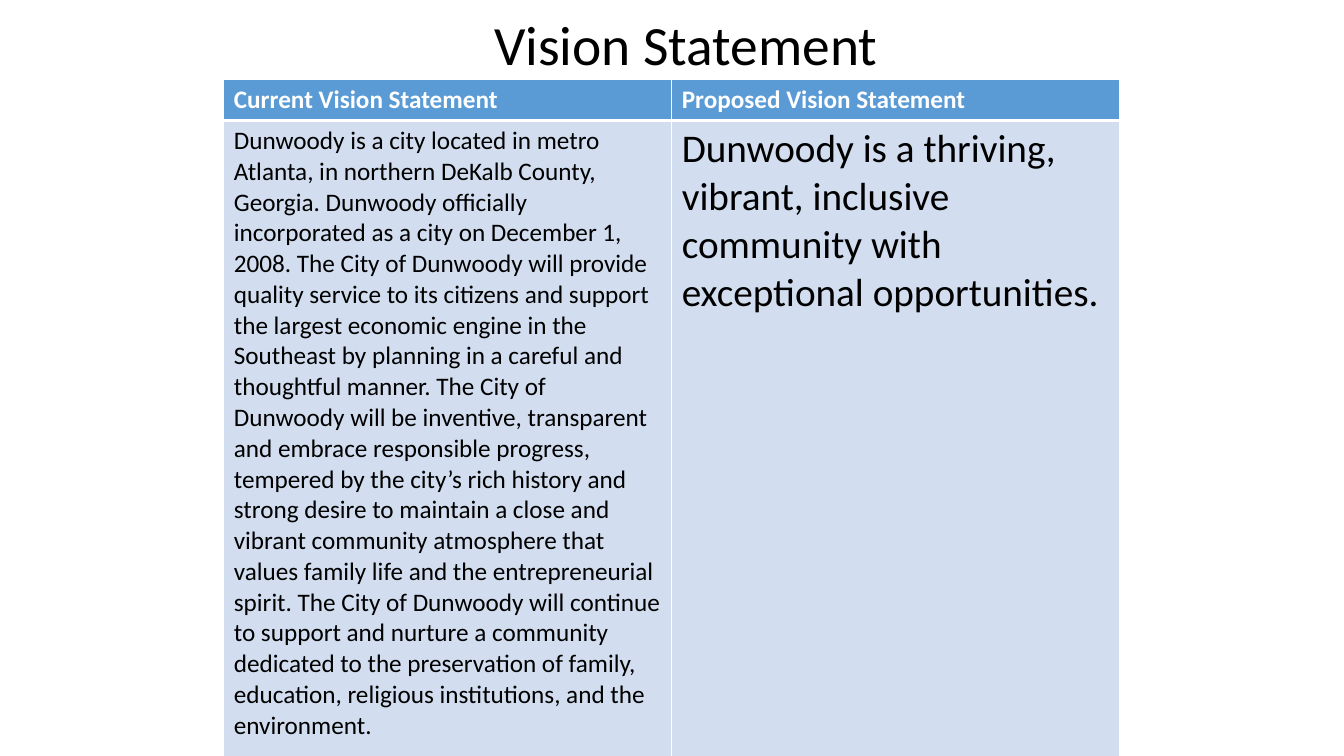
"""Build the slide that compares the current and proposed vision statements."""
from lxml.etree import SubElement
from pptx import Presentation
from pptx.dml.color import RGBColor
from pptx.enum.text import MSO_ANCHOR, MSO_AUTO_SIZE, PP_ALIGN
from pptx.oxml.ns import qn
from pptx.util import Cm, Pt

COLORS = {"header": "5B9BD5", "body": "D2DEEF", "white": "FFFFFF", "black": "000000"}
FONT = "Calibri"
HEADER_HEIGHT, BODY_HEIGHT = Cm(1.03), Cm(16.26)
COLUMN_WIDTH = Cm(11.29)

CURRENT = (
    "Dunwoody is a city located in metro Atlanta, in northern DeKalb County, Georgia. "
    "Dunwoody officially incorporated as a city on December 1, 2008. "
    "The City of Dunwoody will provide quality service to its citizens and support the "
    "largest economic engine in the Southeast by planning in a careful and thoughtful manner. "
    "The City of Dunwoody will be inventive, transparent and embrace responsible progress, "
    "tempered by the city’s rich history and strong desire to maintain a close and vibrant "
    "community atmosphere that values family life and the entrepreneurial spirit. "
    "The City of Dunwoody will continue to support and nurture a community dedicated to the "
    "preservation of family, education, religious institutions, and the environment."
)
PROPOSED = (
    "Dunwoody is a thriving, vibrant, inclusive community with exceptional opportunities."
)
STATEMENTS = [
    ("Current Vision Statement", CURRENT, 18),
    ("Proposed Vision Statement", PROPOSED, 28),
]


def add_text(paragraph, text, size, color, bold=False):
    run = paragraph.add_run()
    run.text = text
    run.font.name = FONT
    run.font.size = Pt(size)
    run.font.bold = bold
    run.font.color.rgb = RGBColor.from_string(COLORS[color])


def style_cell(cell, fill, top, bottom):
    properties = cell._tc.get_or_add_tcPr()
    for side, width in (("L", 1), ("R", 1), ("T", top), ("B", bottom)):
        border = SubElement(properties, qn(f"a:ln{side}"), w=str(Pt(width)))
        border_fill = SubElement(border, qn("a:solidFill"))
        SubElement(border_fill, qn("a:srgbClr"), val=COLORS["white"])
    cell.fill.solid()
    cell.fill.fore_color.rgb = RGBColor.from_string(COLORS[fill])


prs = Presentation()
prs.slide_width, prs.slide_height = Cm(33.87), Cm(19.05)
slide = prs.slides.add_slide(prs.slide_layouts[5])

title = slide.shapes.title
title.left, title.top, title.width, title.height = Cm(3.05), Cm(1.02), Cm(28.47), Cm(0.36)
title.text_frame.auto_size = MSO_AUTO_SIZE.NONE
title.text_frame.vertical_anchor = MSO_ANCHOR.MIDDLE
heading = title.text_frame.paragraphs[0]
heading.alignment = PP_ALIGN.CENTER
heading.line_spacing = 0.9
add_text(heading, "Vision Statement", 39.6, "black")

comparison = slide.shapes.add_table(
    2, 2, Cm(5.64), Cm(2.01), 2 * COLUMN_WIDTH, HEADER_HEIGHT + BODY_HEIGHT
).table
comparison.rows[0].height = HEADER_HEIGHT
comparison.rows[1].height = BODY_HEIGHT

for column, (label, statement, size) in enumerate(STATEMENTS):
    comparison.columns[column].width = COLUMN_WIDTH
    label_cell = comparison.cell(0, column)
    style_cell(label_cell, "header", top=1, bottom=3)
    add_text(label_cell.text_frame.paragraphs[0], label, 18, "white", bold=True)
    statement_cell = comparison.cell(1, column)
    style_cell(statement_cell, "body", top=3, bottom=1)
    add_text(statement_cell.text_frame.paragraphs[0], statement, size, "black")

prs.save("out.pptx")
